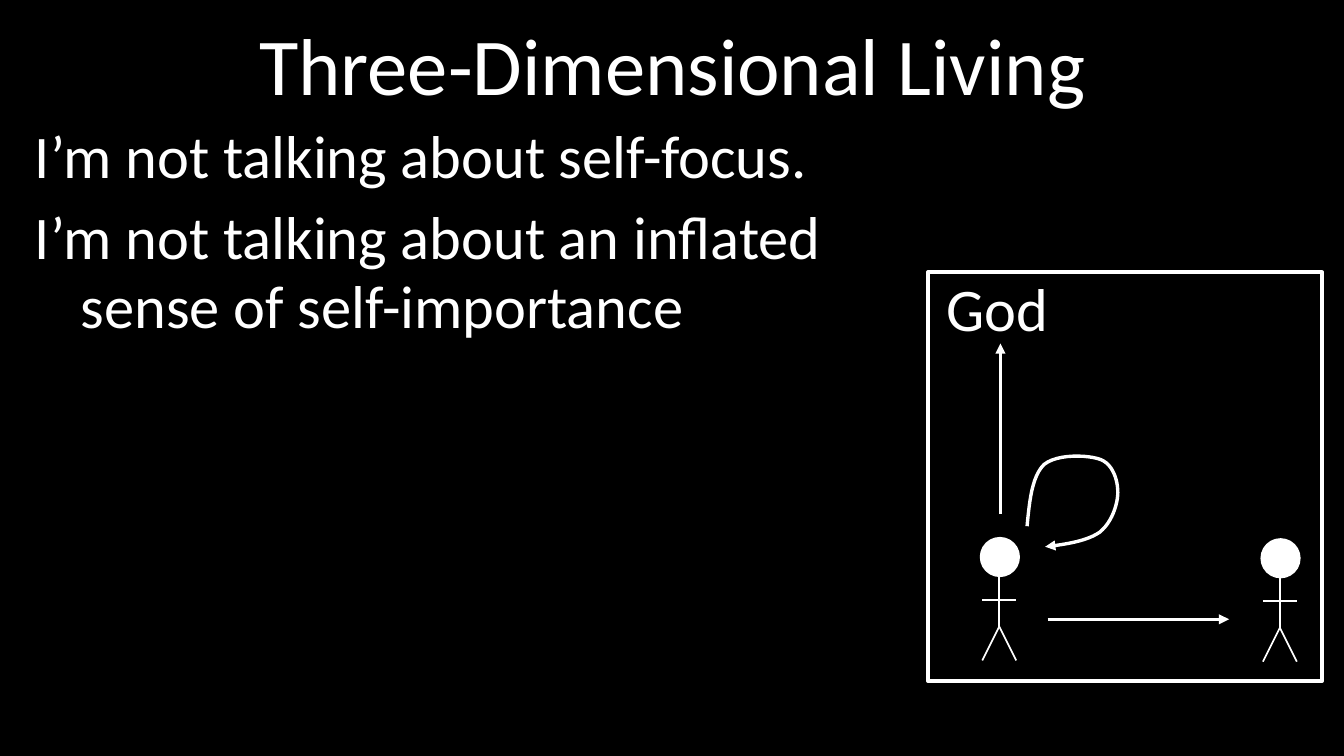
from lxml import etree
from pptx import Presentation, util as u
from pptx.dml.color import RGBColor
from pptx.enum import shapes as sh, text as tx
from pptx.oxml import ns

Inches, Pt = u.Inches, u.Pt
WHITE, BLACK = "FFFFFF", "000000"


def color(hex_value):
    return RGBColor.from_string(hex_value)


def stroke(item, width, arrow=False):
    item.line.color.rgb = color(WHITE)
    item.line.width = Pt(width)
    properties = item._element.spPr
    if arrow:
        etree.SubElement(item.line._get_or_add_ln(), ns.qn("a:tailEnd"), type="triangle")
    if properties.find(ns.qn("a:effectLst")) is None:
        etree.SubElement(properties, ns.qn("a:effectLst"))


deck = Presentation()
deck.slide_width, deck.slide_height = Inches(11.11), Inches(6.25)
slide = deck.slides.add_slide(deck.slide_layouts[6])
slide.background.fill.solid()
slide.background.fill.fore_color.rgb = color(BLACK)

heading = slide.shapes.add_textbox(Inches(0.19), Inches(0.14), Inches(10.74), Inches(0.76))
heading.text_frame.word_wrap = True
heading.text_frame.vertical_anchor = tx.MSO_ANCHOR.MIDDLE
title = heading.text_frame.paragraphs[0]
title.text = "Three-Dimensional Living"
title.alignment = tx.PP_ALIGN.CENTER
title.font.name, title.font.size = "Calibri", Pt(48)
title.font.color.rgb = color(WHITE)

statements = slide.shapes.add_textbox(Inches(0.19), Inches(0.97), Inches(10.74), Inches(5.07))
statements.text_frame.word_wrap = True
lines = ["I’m not talking about self-focus.",
         "I’m not talking about an inflated\vsense of self-importance"]
for number, line in enumerate(lines):
    if number == 0:
        statement = statements.text_frame.paragraphs[0]
    else:
        statement = statements.text_frame.add_paragraph()
        statement.space_before = Pt(7.2)
    statement.text = line
    statement.line_spacing = 0.95
    indent = statement._p.get_or_add_pPr()
    indent.set("marL", str(Inches(0.38)))
    indent.set("indent", str(-Inches(0.38)))
    statement.font.name, statement.font.size = "Calibri", Pt(36)
    statement.font.color.rgb = color(WHITE)

god = slide.shapes.add_shape(sh.MSO_SHAPE.RECTANGLE, Inches(7.67), Inches(2.25), Inches(1.15), Inches(0.65))
god.shadow.inherit = False
god.fill.solid()
god.fill.fore_color.rgb = color(BLACK)
god.line.fill.background()
god.text_frame.word_wrap = False
god_label = god.text_frame.paragraphs[0]
god_label.text = "God"
god_label.alignment = tx.PP_ALIGN.CENTER
god_label.line_spacing = 0.9
god_label.font.name, god_label.font.size = "Calibri", Pt(36)
god_label.font.color.rgb = color(WHITE)

strokes = [(8.27, 4.25, 8.27, 2.84, 2, True), (8.66, 5.12, 10.16, 5.12, 2, True)]
for center, top in [(8.26, 4.46), (10.58, 4.47)]:
    head = slide.shapes.add_shape(sh.MSO_SHAPE.OVAL, Inches(center - 0.14), Inches(top),
                                  Inches(0.29), Inches(0.29))
    head.shadow.inherit = False
    head.fill.solid()
    head.fill.fore_color.rgb = color(WHITE)
    stroke(head, 3)
    hip, foot, arm = top + 0.72, top + 1, top + 0.5
    strokes += [(center, top + 0.29, center, hip, 1, False),
                (center, hip, center + 0.14, foot, 1, False),
                (center, hip, center - 0.14, foot, 1, False),
                (center - 0.14, arm, center + 0.14, arm, 1, False)]
for x1, y1, x2, y2, width, arrow in strokes:
    limb = slide.shapes.add_connector(sh.MSO_CONNECTOR.STRAIGHT,
                                      Inches(x1), Inches(y1), Inches(x2), Inches(y2))
    stroke(limb, width, arrow)

loop_start = (8.49, 4.35)
bends = [[(8.51, 4.14), (8.53, 3.94), (8.63, 3.84)],
         [(8.74, 3.75), (9.0, 3.76), (9.1, 3.8)],
         [(9.2, 3.84), (9.24, 3.97), (9.24, 4.07)],
         [(9.24, 4.17), (9.19, 4.32), (9.09, 4.4)],
         [(8.99, 4.47), (8.82, 4.5), (8.64, 4.52)]]
steps = 12
loop_points = []
corner = loop_start
for bend in bends:
    for step in range(1, steps + 1):
        t = step / steps
        weights = [(1 - t) ** 3, 3 * t * (1 - t) ** 2, 3 * t ** 2 * (1 - t), t ** 3]
        loop_points.append([Inches(sum(w * p[axis] for w, p in zip(weights, [corner, *bend])))
                            for axis in (0, 1)])
    corner = bend[-1]
builder = slide.shapes.build_freeform(Inches(loop_start[0]), Inches(loop_start[1]))
builder.add_line_segments(loop_points, close=False)
self_loop = builder.convert_to_shape()
self_loop.shadow.inherit = False
self_loop.fill.background()
stroke(self_loop, 2, True)

frame = slide.shapes.add_shape(sh.MSO_SHAPE.RECTANGLE, Inches(7.67), Inches(2.25), Inches(3.26), Inches(3.38))
frame.shadow.inherit = False
frame.fill.background()
stroke(frame, 2)

deck.save("out.pptx")
